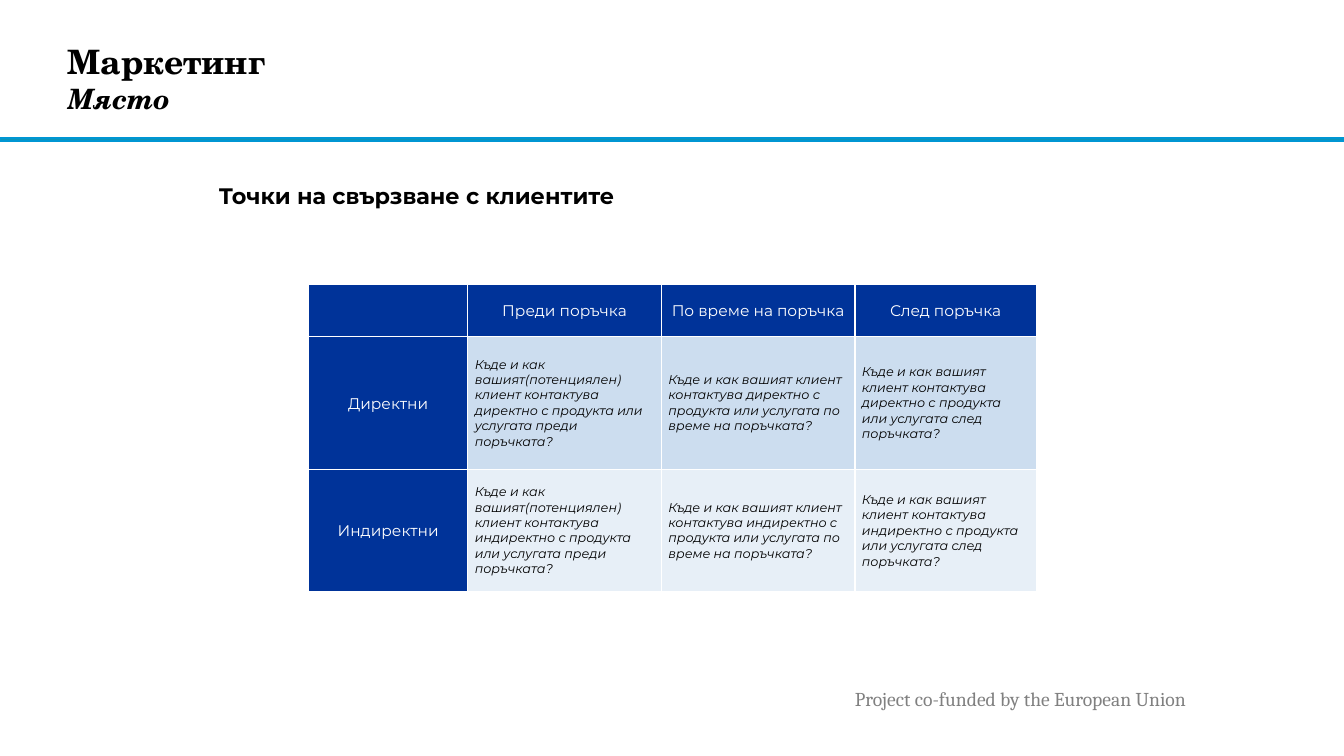
"""Build the marketing slide on customer contact points."""
from lxml.etree import SubElement as Sub
from pptx import Presentation
from pptx.dml.color import RGBColor as RGB
from pptx.enum.shapes import MSO_SHAPE as Shape
from pptx.enum.text import MSO_ANCHOR as Anchor, PP_ALIGN as Align
from pptx.oxml.ns import qn
from pptx.util import Inches, Pt

COLORS = {
    "black": "000000", "white": "FFFFFF", "gray": "808080",
    "bar": "0C94B7", "edge": "0096D3",
    "head": "003399", "direct": "CCDDEF", "other": "E7EFF7",
}
SANS = "Montserrat"


def add_run(para, text, face, size, color="black", bold=False, italic=False):
    run = para.add_run()
    run.text = text
    font = run.font
    font.name, font.size = face, Pt(size)
    font.bold, font.italic = bold, italic
    font.color.rgb = RGB.from_string(COLORS[color])


def add_box(left, top, width, height, pad_x, pad_y):
    box = slide.shapes.add_textbox(
        Inches(left), Inches(top), Inches(width), Inches(height))
    frame = box.text_frame
    frame.word_wrap = True
    frame.margin_left = frame.margin_right = Inches(pad_x)
    frame.margin_top = frame.margin_bottom = Inches(pad_y)
    return frame


prs = Presentation()
prs.slide_width, prs.slide_height = Inches(13.33), Inches(7.5)
slide = prs.slides.add_slide(prs.slide_layouts[6])

bar = slide.shapes.add_shape(
    Shape.RECTANGLE, Inches(0), Inches(1.37), Inches(13.33), Inches(0.03))
bar.shadow.inherit = False
bar.fill.solid()
bar.fill.fore_color.rgb = RGB.from_string(COLORS["bar"])
bar.line.color.rgb = RGB.from_string(COLORS["edge"])
bar.line.width = Pt(1)

foot = add_box(8.38, 6.77, 4.88, 0.34, 0.1, 0.05)
add_run(foot.paragraphs[0], "Project co-funded by the European Union",
        "Cambria", 14, "gray")

title = add_box(0.67, 0.18, 9.69, 1.19, 0, 0)
title.vertical_anchor = Anchor.MIDDLE
para = title.paragraphs[0]
add_run(para, "Маркетинг", "TeX Gyre Schola", 24, bold=True)
para.add_line_break()
add_run(para, "Място", "TeX Gyre Schola", 20, bold=True, italic=True)

body = add_box(2.17, 1.76, 8.49, 0.5, 0, 0.05)
add_run(body.paragraphs[0], "Точки на свързване с клиентите", SANS, 16, bold=True)

rows = [
    ["", "Преди поръчка", "По време на поръчка", "След поръчка"],
    ["Директни",
     "Къде и как вашият(потенциялен) клиент контактува директно с продукта или услугата преди поръчката?",
     "Къде и как вашият клиент контактува директно с продукта или услугата по време на поръчката?",
     "Къде и как вашият клиент контактува директно с продукта или услугата след поръчката?"],
    ["Индиректни",
     "Къде и как вашият(потенциялен) клиент контактува индиректно с продукта или услугата преди поръчката?",
     "Къде и как вашият клиент контактува индиректно с продукта или услугата по време на поръчката?",
     "Къде и как вашият клиент контактува индиректно с продукта или услугата след поръчката?"],
]
widths = [1.58, 1.92, 1.92, 1.8]
heights = [0.52, 1.32, 1.21]
fills = ["head", "direct", "other"]

table = slide.shapes.add_table(
    len(rows), len(widths), Inches(3.06), Inches(2.82),
    Inches(sum(widths)), Inches(sum(heights))).table
table.horz_banding = False
for col, width in zip(table.columns, widths):
    col.width = Inches(width)
for row, height in zip(table.rows, heights):
    row.height = Inches(height)

for r, texts in enumerate(rows):
    for c, text in enumerate(texts):
        cell = table.cell(r, c)
        head = r == 0 or c == 0
        props = cell._tc.get_or_add_tcPr()
        for side in ("lnL", "lnR", "lnT", "lnB"):
            line = Sub(props, qn(f"a:{side}"), w=str(Pt(1)))
            Sub(Sub(line, qn("a:solidFill")), qn("a:srgbClr"), val=COLORS["white"])
        cell.fill.solid()
        cell.fill.fore_color.rgb = RGB.from_string(COLORS["head" if head else fills[r]])
        cell.vertical_anchor = Anchor.MIDDLE
        cell.margin_left = cell.margin_right = Inches(0.07)
        cell.margin_top = cell.margin_bottom = Inches(0)
        para = cell.text_frame.paragraphs[0]
        if head:
            para.alignment = Align.CENTER
            para.line_spacing = 1.07
        if text:
            add_run(para, text, SANS, 11 if head else 9,
                    "white" if head else "black", italic=not head)

prs.save("out.pptx")
